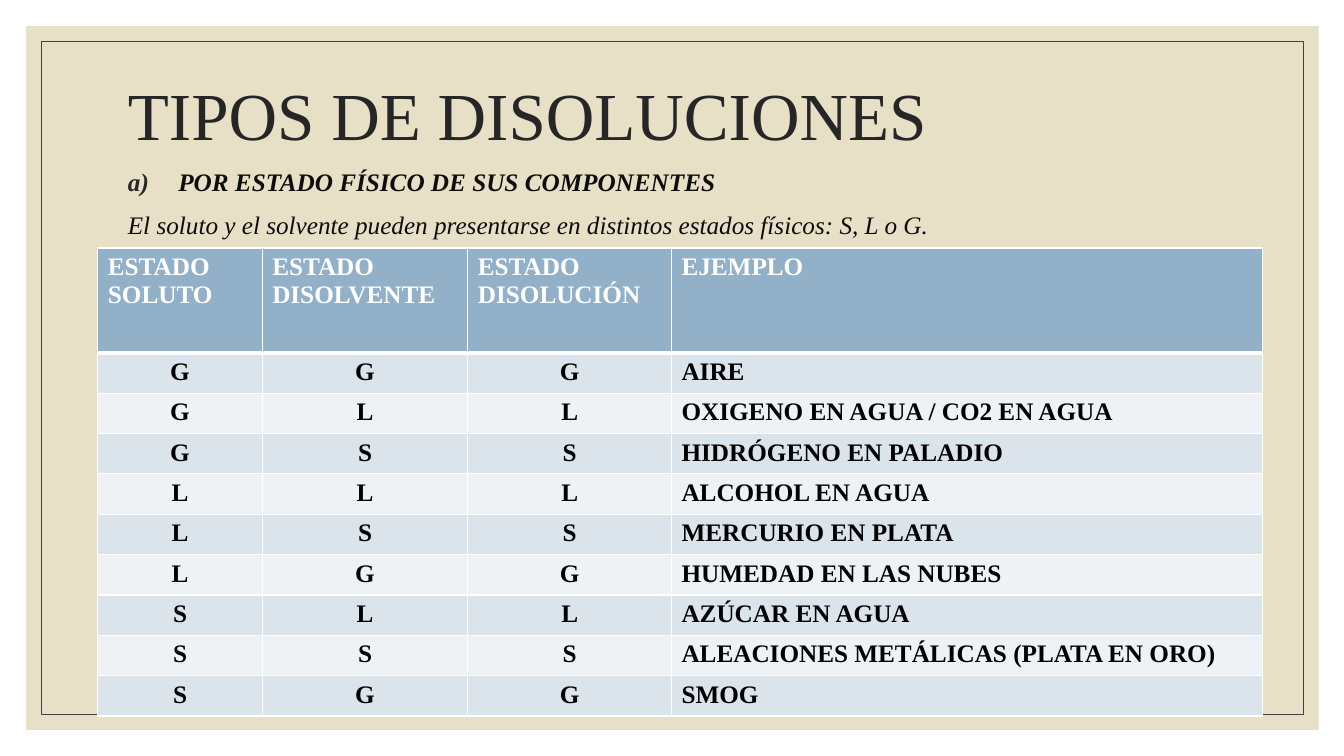
from collections import namedtuple
from dataclasses import dataclass

from lxml.etree import SubElement
from pptx import Presentation
from pptx.dml.color import RGBColor as RGB
from pptx.enum.shapes import MSO_SHAPE as Shape
from pptx.enum.text import MSO_ANCHOR as Anchor, PP_ALIGN as Align
from pptx.oxml.ns import qn
from pptx.util import Inches, Pt


@dataclass(frozen=True)
class Theme:
    font: str = "Times New Roman"
    title: int = 48
    text: int = 18
    gap: int = 9
    thin: float = 1
    thick: float = 3
    sand: str = "E7E0C7"
    frame: str = "404040"
    ink: str = "262626"
    body: str = "0D0D0D"
    head: str = "92B0C8"
    bands: tuple = ("DCE4EB", "EEF2F5")
    white: str = "FFFFFF"
    black: str = "000000"


THEME = Theme()
Box = namedtuple("Box", "left top width height")
PAGE = Box(0, 0, Inches(13.33), Inches(7.5))

HEADS = ("ESTADO SOLUTO", "ESTADO DISOLVENTE", "ESTADO DISOLUCIÓN", "EJEMPLO")
# Solute, solvent, example; a solution takes the state of its solvent.
MIXES = (
    ("G", "G", "AIRE"),
    ("G", "L", "OXIGENO EN AGUA / CO2 EN AGUA"),
    ("G", "S", "HIDRÓGENO EN PALADIO"),
    ("L", "L", "ALCOHOL EN AGUA"),
    ("L", "S", "MERCURIO EN PLATA"),
    ("L", "G", "HUMEDAD EN LAS NUBES"),
    ("S", "L", "AZÚCAR EN AGUA"),
    ("S", "S", "ALEACIONES METÁLICAS (PLATA EN ORO)"),
    ("S", "G", "SMOG"),
)
COLS = (1.63, 2.04, 2.02, 5.86)
ROWS = (2.6,) + (1,) * len(MIXES)


def part(box, left, top, width, height):
    """Return an inner box given in percent of the outer one."""
    return Box(int(box.left + box.width * left / 100),
               int(box.top + box.height * top / 100),
               int(box.width * width / 100),
               int(box.height * height / 100))


def style(para, size, color, bold=False, italic=False):
    for run in para.runs:
        font = run.font
        font.name, font.size = THEME.font, Pt(size)
        font.bold, font.italic = bold, italic
        font.color.rgb = RGB.from_string(color)


def panel(slide, box, fill=None, line=None):
    rect = slide.shapes.add_shape(Shape.RECTANGLE, *box)
    rect.shadow.inherit = False
    if fill:
        rect.fill.solid()
        rect.fill.fore_color.rgb = RGB.from_string(fill)
    else:
        rect.fill.background()
    if line:
        rect.line.color.rgb = RGB.from_string(line)
        rect.line.width = Pt(0.5)
    else:
        rect.line.fill.background()


def backdrop(slide, box):
    panel(slide, part(box, 1.95, 3.47, 96.17, 93.07), fill=THEME.sand)
    panel(slide, part(box, 3.08, 5.47, 93.92, 89.07), line=THEME.frame)


def heading(slide, box):
    frame = slide.shapes.add_textbox(*box).text_frame
    frame.word_wrap = True
    frame.vertical_anchor = Anchor.MIDDLE
    frame.text = "TIPOS DE DISOLUCIONES"
    para = frame.paragraphs[0]
    para.line_spacing = 0.9
    style(para, THEME.title, THEME.ink)


def letter(para):
    """Number a paragraph as a), with a hanging indent."""
    props = para._p.get_or_add_pPr()
    props.set("marL", str(Inches(0.5)))
    props.set("indent", str(Inches(-0.5)))
    color = SubElement(props, qn("a:buClr"))
    SubElement(color, qn("a:srgbClr"), val=THEME.ink)
    SubElement(props, qn("a:buAutoNum"), type="alphaLcParenR")


def intro(slide, box):
    frame = slide.shapes.add_textbox(*box).text_frame
    frame.word_wrap = True
    frame.text = ("POR ESTADO FÍSICO DE SUS COMPONENTES\n"
                  "El soluto y el solvente pueden presentarse en distintos "
                  "estados físicos: S, L o G.")
    for para, bold in zip(frame.paragraphs, (True, False)):
        para.space_before = Pt(THEME.gap)
        style(para, THEME.text, THEME.body, bold, italic=True)
    letter(frame.paragraphs[0])


def border(cell, **widths):
    props = cell._tc.get_or_add_tcPr()
    for side in "LRTB":
        width = Pt(widths.get(side, THEME.thin))
        line = SubElement(props, qn(f"a:ln{side}"), w=str(width))
        fill = SubElement(line, qn("a:solidFill"))
        SubElement(fill, qn("a:srgbClr"), val=THEME.white)


def paint(cell, text, fill, color, align):
    cell.text = text
    cell.fill.solid()
    cell.fill.fore_color.rgb = RGB.from_string(fill)
    para = cell.text_frame.paragraphs[0]
    para.alignment = align
    style(para, THEME.text, color, bold=True)


def states(slide, box):
    """Place the table of solute, solvent and solution states."""
    table = slide.shapes.add_table(len(ROWS), len(COLS), *box).table
    for col, share in zip(table.columns, COLS):
        col.width = int(box.width * share / sum(COLS))
    for row, share in zip(table.rows, ROWS):
        row.height = int(box.height * share / sum(ROWS))

    for col, text in enumerate(HEADS):
        cell = table.cell(0, col)
        border(cell, B=THEME.thick)
        paint(cell, text, THEME.head, THEME.white, Align.LEFT)

    last = len(COLS) - 1
    for row, (solute, solvent, sample) in enumerate(MIXES, 1):
        fill = THEME.bands[(row - 1) % 2]
        for col, text in enumerate((solute, solvent, solvent, sample)):
            cell = table.cell(row, col)
            border(cell, T=THEME.thick if row == 1 else THEME.thin)
            align = Align.LEFT if col == last else Align.CENTER
            paint(cell, text, fill, THEME.black, align)


def main():
    deck = Presentation()
    deck.slide_width, deck.slide_height = PAGE.width, PAGE.height
    slide = deck.slides.add_slide(deck.slide_layouts[6])
    backdrop(slide, PAGE)
    heading(slide, part(PAGE, 8.78, 5.73, 82.52, 20))
    intro(slide, part(PAGE, 8.78, 21.33, 82.52, 57.33))
    states(slide, part(PAGE, 7.28, 32.8, 86.65, 61.87))
    deck.save("out.pptx")


if __name__ == "__main__":
    main()
